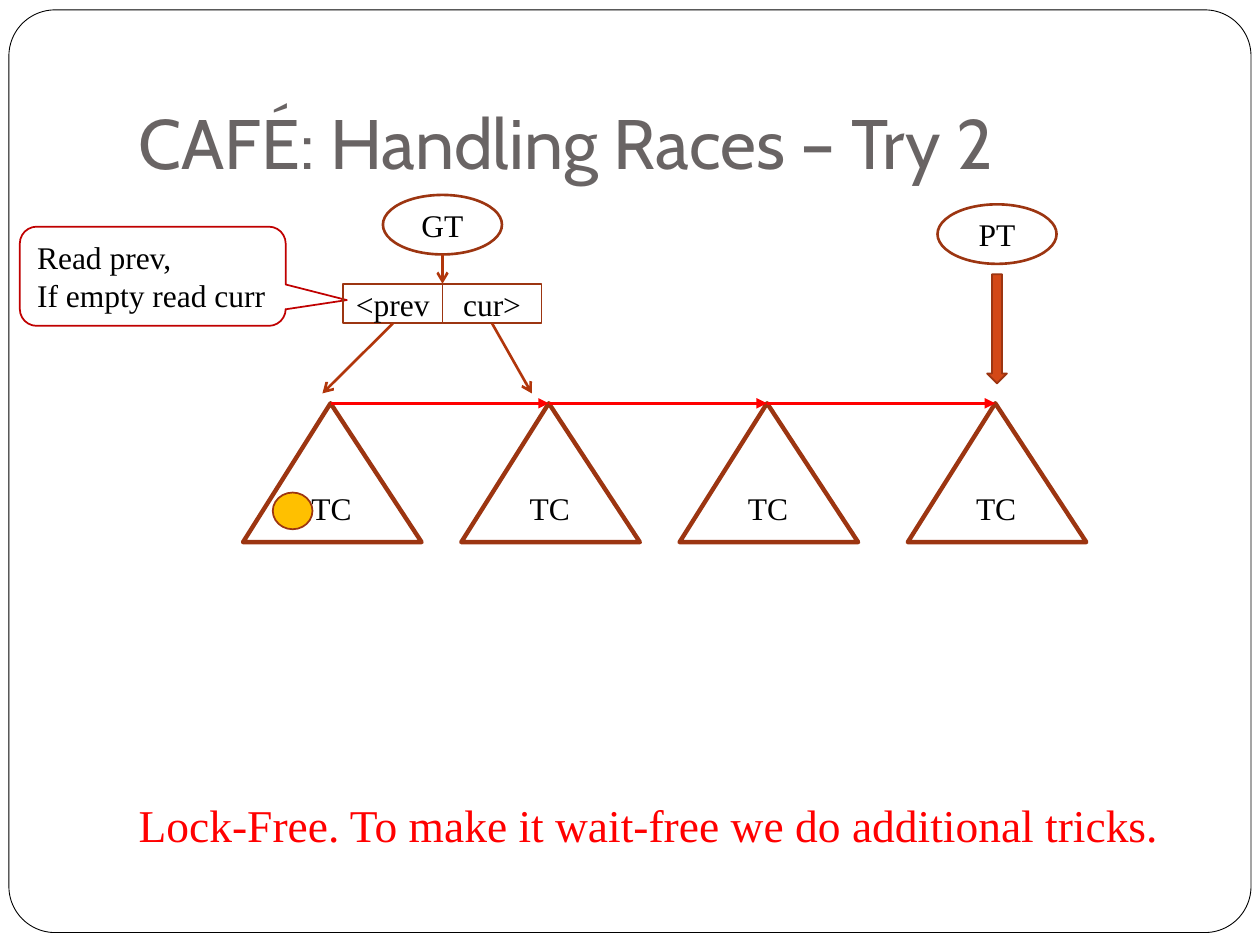
from lxml.etree import SubElement
from pptx import Presentation
from pptx.dml.color import RGBColor
from pptx.enum.shapes import MSO_CONNECTOR, MSO_SHAPE
from pptx.enum.text import MSO_ANCHOR, MSO_AUTO_SIZE, PP_ALIGN
from pptx.oxml.ns import qn
from pptx.util import Cm, Pt

BLACK = RGBColor(0x00, 0x00, 0x00)
GRAY = RGBColor(0x69, 0x64, 0x64)
BROWN = RGBColor(0x9C, 0x35, 0x11)
RUST = RGBColor(0xB1, 0x36, 0x0B)
ORANGE = RGBColor(0xD3, 0x48, 0x17)
GOLD = RGBColor(0xFF, 0xC0, 0x00)
CRIMSON = RGBColor(0xC0, 0x00, 0x00)
RED = RGBColor(0xFF, 0x00, 0x00)

SERIF = "Times New Roman"
APEX = 0.49  # horizontal place of a triangle's tip, as a share of its width


def write(frame, text, size=18, font=SERIF, color=BLACK,
          align=PP_ALIGN.LEFT, anchor=MSO_ANCHOR.MIDDLE):
    """Fill a text frame, one paragraph for each line of text."""
    frame.text = text
    frame.word_wrap = True
    frame.auto_size = MSO_AUTO_SIZE.NONE
    frame.vertical_anchor = anchor
    for para in frame.paragraphs:
        para.alignment = align
        for span in para.runs:
            span.font.size = Pt(size)
            span.font.name = font
            span.font.color.rgb = color


class Painter:
    """Holds the current page and the way its elements are styled."""

    def __init__(self, page):
        self.page = page

    def place(self, shape, left, top, width, height):
        shape.left, shape.top = Cm(left), Cm(top)
        shape.width, shape.height = Cm(width), Cm(height)

    def title(self, text, *place):
        box = self.page.shapes.title
        self.place(box, *place)
        write(box.text_frame, text, size=40, font="Cabin", color=GRAY,
              anchor=MSO_ANCHOR.BOTTOM)
        box.text_frame.margin_bottom = Cm(0.25)

    def body(self, text, *place):
        box = self.page.placeholders[1]
        self.place(box, *place)
        write(box.text_frame, text, size=26, color=RED, anchor=MSO_ANCHOR.TOP)
        para = box.text_frame.paragraphs[0]
        para.space_before = Pt(5.8)
        properties = para._p.get_or_add_pPr()
        properties.set("marL", str(Cm(0.76)))
        properties.set("indent", str(-Cm(0.76)))
        SubElement(properties, qn("a:buNone"))

    def shape(self, kind, left, top, width, height, text="", fill=None,
              line=BROWN, weight=1, adjust=(), align=PP_ALIGN.CENTER):
        box = self.page.shapes.add_shape(
            kind, Cm(left), Cm(top), Cm(width), Cm(height))
        box.shadow.inherit = False
        for index, value in enumerate(adjust):
            box.adjustments[index] = value
        if fill is None:
            box.fill.background()
        else:
            box.fill.solid()
            box.fill.fore_color.rgb = fill
        box.line.color.rgb = line
        box.line.width = Pt(weight)
        if text:
            write(box.text_frame, text, align=align)
        return box

    def oval(self, text, left, top):
        return self.shape(MSO_SHAPE.OVAL, left, top, 2.4, 1.2, text, weight=1.5)

    def cell(self, text, left):
        box = self.shape(MSO_SHAPE.RECTANGLE, left, 5.72, 2, 0.8, text)
        box.text_frame.margin_left = box.text_frame.margin_right = 0
        return box

    def arrow(self, start, end, color=RUST, weight=1.5, head="arrow", source=None):
        """Draw an arrow; a source box is joined at the middle of its bottom."""
        link = self.page.shapes.add_connector(
            MSO_CONNECTOR.STRAIGHT, *(Cm(value) for value in (*start, *end)))
        if source is not None:
            link.begin_connect(source, 2)
        link.line.color.rgb = color
        link.line.width = Pt(weight)
        SubElement(link.line._get_or_add_ln(), qn("a:tailEnd"), type=head)
        SubElement(link._element.spPr, qn("a:effectLst"))


def main():
    deck = Presentation()
    deck.slide_width, deck.slide_height = Cm(25.4), Cm(19.05)
    page = deck.slides.add_slide(deck.slide_layouts[1])
    painter = Painter(page)

    painter.shape(MSO_SHAPE.ROUNDED_RECTANGLE, 0.18, 0.2, 25.04, 18.6,
                  line=BLACK, weight=0.5, adjust=[0.05])
    painter.title("CAFÉ: Handling Races – Try 2", 2.54, 0.76, 21.59, 3.18)
    painter.body("Lock-Free. To make it wait-free we do additional tricks.",
                 2.54, 15.93, 21.59, 1.6)

    # Chain of chunks
    chain_top, chunk_width = 8.13, 3.6
    chunk_lefts = [4.9, 9.3, 13.7, 18.3]
    tips = [(left + APEX * chunk_width, chain_top) for left in chunk_lefts]
    for left in chunk_lefts:
        painter.shape(MSO_SHAPE.ISOSCELES_TRIANGLE, left, chain_top, chunk_width, 2.8,
                      "TC", weight=2.5, adjust=[APEX])
    for start, end in zip(tips, tips[1:]):
        painter.arrow(start, end, color=RED, weight=2, head="triangle")
    painter.shape(MSO_SHAPE.OVAL, 5.5, 9.93, 0.8, 0.74, fill=GOLD)

    # Put pointer
    painter.oval("PT", 18.9, 4.12)
    painter.shape(MSO_SHAPE.DOWN_ARROW, 19.9, 5.53, 0.4, 2.2, fill=ORANGE)

    # Get pointer with its pair of references
    painter.shape(MSO_SHAPE.ROUNDED_RECTANGULAR_CALLOUT, 0.4, 4.57, 5.36, 2,
                  "Read prev,\nIf empty read curr", line=CRIMSON,
                  adjust=[0.73, 0.24, 0.17], align=PP_ALIGN.LEFT)
    painter.oval("GT", 7.72, 3.93)
    current = painter.cell("cur>", 8.92)
    previous = painter.cell("<prev", 6.92)
    painter.arrow((9.92, 6.52), (10.72, 7.93), source=current)
    painter.arrow((7.92, 6.52), (6.5, 7.93), source=previous)
    painter.arrow((8.92, 5.13), (8.92, 5.72))

    deck.save("out.pptx")


if __name__ == "__main__":
    main()
